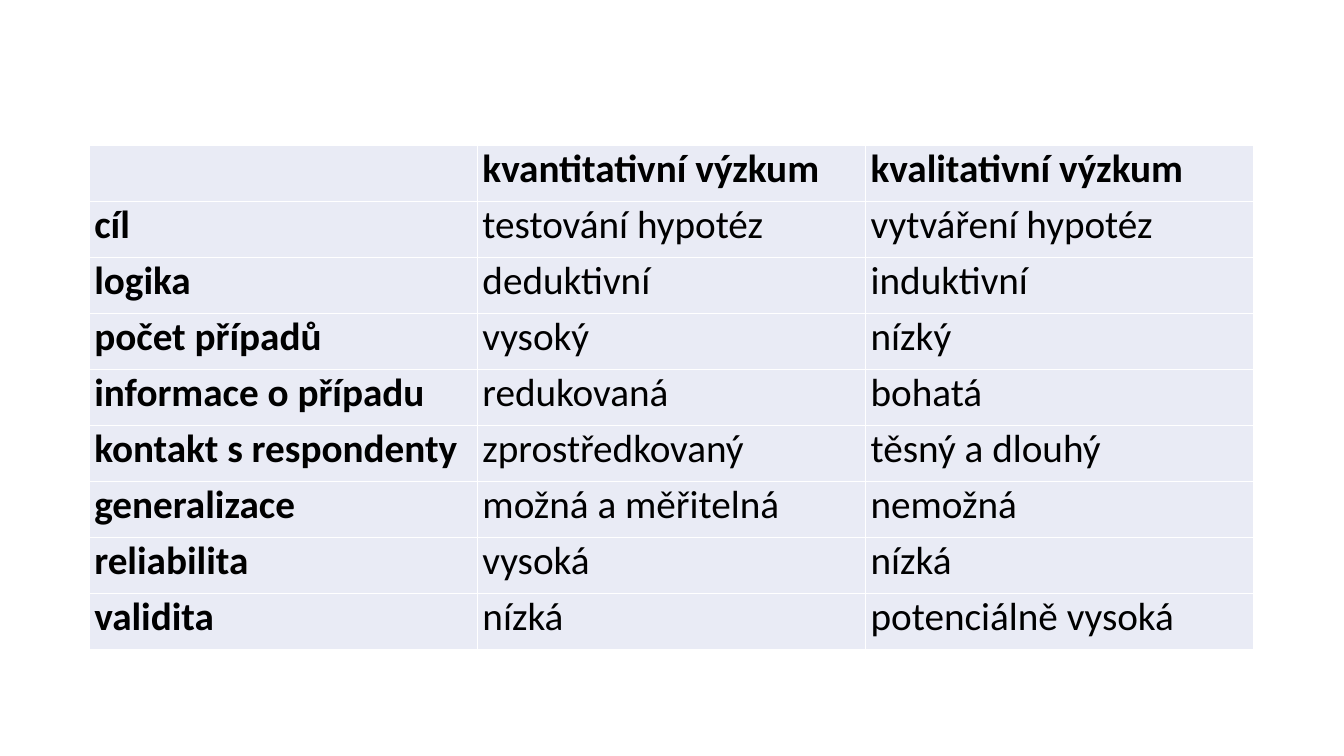
import dataclasses

import pptx
import pptx.dml.color
import pptx.enum.text
import pptx.oxml
import pptx.oxml.ns
import pptx.util


@dataclasses.dataclass(frozen=True)
class Theme:
    font: str = "Calibri"
    text_size: int = 28
    text_color: str = "000000"
    cell_fill: str = "E9EBF5"
    border_color: str = "FFFFFF"
    border_width: int = 1
    side_margin: float = 0.05


COMPARISON = [
    ("", "kvantitativní výzkum", "kvalitativní výzkum"),
    ("cíl", "testování hypotéz", "vytváření hypotéz"),
    ("logika", "deduktivní", "induktivní"),
    ("počet případů", "vysoký", "nízký"),
    ("informace o případu", "redukovaná", "bohatá"),
    ("kontakt s respondenty", "zprostředkovaný", "těsný a dlouhý"),
    ("generalizace", "možná a měřitelná", "nemožná"),
    ("reliabilita", "vysoká", "nízká"),
    ("validita", "nízká", "potenciálně vysoká"),
]


class PageBuilder:
    """Holds the theme and the current slide; table lengths are grid units."""

    COLUMN = 3.85  # inches
    ROW = 5 / 9

    def __init__(self, deck, theme):
        self.theme = theme
        self.page = deck.slides.add_slide(deck.slide_layouts[6])

    def table(self, left, top, rows):
        """Place a table at shares of the grid, one unit per column and row."""
        column_width = pptx.util.Inches(self.COLUMN)
        row_height = pptx.util.Inches(self.ROW)
        frame = self.page.shapes.add_table(
            len(rows), len(rows[0]),
            int(left * column_width), int(top * row_height),
            column_width * len(rows[0]), row_height * len(rows))
        table = frame.table
        table.first_row = table.horz_banding = False
        for row in table.rows:
            row.height = row_height
        for row_index, row in enumerate(rows):
            for column_index, text in enumerate(row):
                heading = row_index == 0 or column_index == 0
                self.cell(table.cell(row_index, column_index), text, heading)

    def cell(self, cell, text, bold):
        """Fill one cell and format its text."""
        theme = self.theme
        cell.margin_left = cell.margin_right = pptx.util.Inches(theme.side_margin)
        cell.margin_top = cell.margin_bottom = 0
        cell.vertical_anchor = pptx.enum.text.MSO_ANCHOR.TOP
        self.borders(cell)
        cell.fill.solid()
        cell.fill.fore_color.rgb = pptx.dml.color.RGBColor.from_string(theme.cell_fill)
        if not text:
            return
        para = cell.text_frame.paragraphs[0]
        para.text = text
        for span in para.runs:
            span.font.name = theme.font
            span.font.size = pptx.util.Pt(theme.text_size)
            span.font.bold = bold
            span.font.color.rgb = pptx.dml.color.RGBColor.from_string(theme.text_color)

    def borders(self, cell):
        """Draw the same thin line on all four sides of a cell."""
        properties = cell._tc.get_or_add_tcPr()
        width = pptx.util.Pt(self.theme.border_width)
        for side in ("lnL", "lnR", "lnT", "lnB"):
            properties.append(pptx.oxml.parse_xml(
                f'<a:{side} {pptx.oxml.ns.nsdecls("a")} w="{width}"><a:solidFill>'
                f'<a:srgbClr val="{self.theme.border_color}"/>'
                f'</a:solidFill></a:{side}>'))


def main():
    deck = pptx.Presentation()
    deck.slide_width = pptx.util.Inches(13.33)
    deck.slide_height = pptx.util.Inches(7.5)

    # Comparison of the two kinds of research
    builder = PageBuilder(deck, Theme())
    builder.table(left=0.23, top=2.6, rows=COMPARISON)

    deck.save("out.pptx")


if __name__ == "__main__":
    main()
